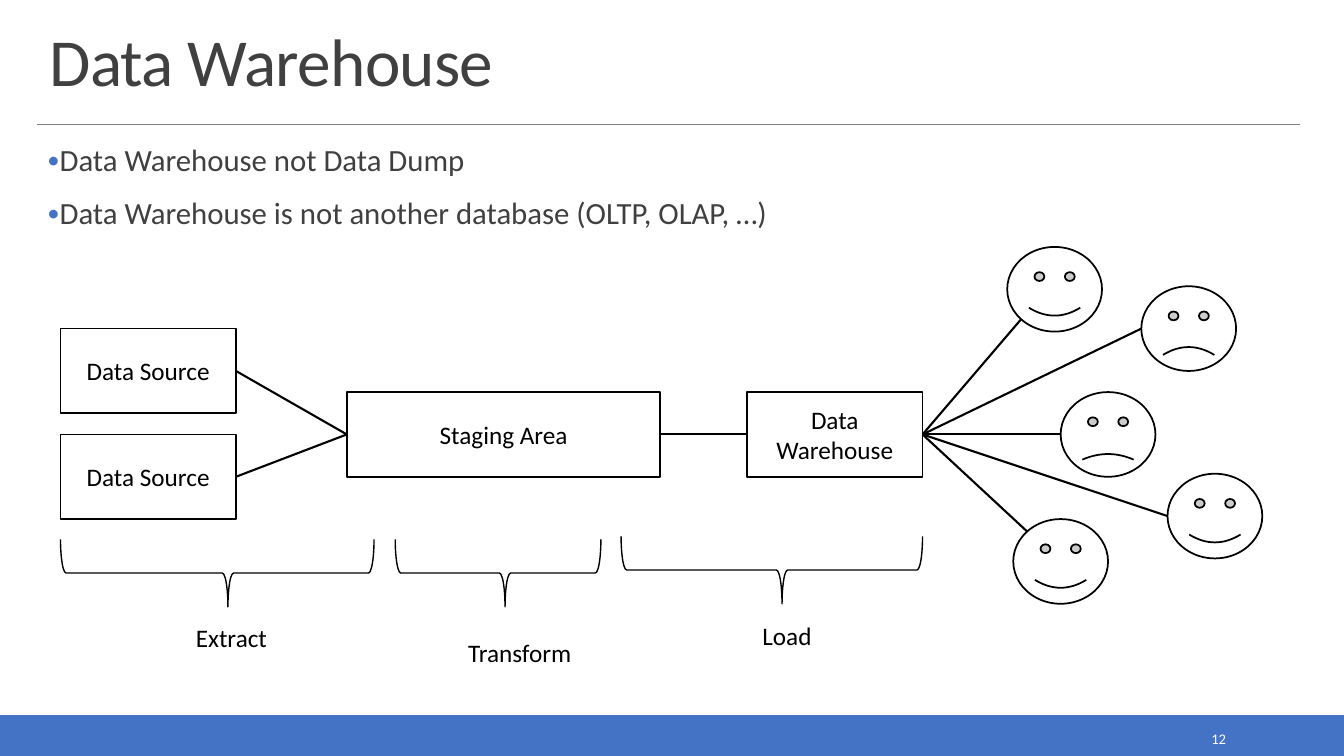
from dataclasses import dataclass
from math import cos, radians, sin
from typing import Optional

from lxml.etree import SubElement
from pptx import Presentation
from pptx.dml.color import RGBColor
from pptx.enum.shapes import MSO_CONNECTOR, MSO_SHAPE
from pptx.enum.text import MSO_ANCHOR, MSO_AUTO_SIZE, PP_ALIGN
from pptx.oxml.ns import qn
from pptx.shapes.autoshape import Shape
from pptx.slide import Slide
from pptx.text.text import TextFrame, _Paragraph
from pptx.util import Inches, Pt


@dataclass(frozen=True)
class Theme:
    font: str = "Calibri"
    accent: str = "4472C4"
    heading: str = "404040"
    ink: str = "000000"
    paper: str = "FFFFFF"
    rule: str = "808080"
    title_size: float = 48
    body_size: float = 22
    label_size: float = 18
    number_size: float = 10.5


@dataclass(frozen=True)
class Box:
    text: str
    left: float
    top: float
    width: float = 1.74
    height: float = 0.84

    @property
    def middle(self) -> float:
        return self.top + self.height / 2

    @property
    def right(self) -> float:
        return self.left + self.width


@dataclass(frozen=True)
class Face:
    left: float
    top: float
    link_angle: int = 180
    smile: Optional[float] = None
    width: float = 0.94
    height: float = 0.84

    @property
    def link_point(self) -> tuple[float, float]:
        angle = radians(self.link_angle)
        return (self.left + self.width / 2 * (1 + cos(angle)),
                self.top + self.height / 2 * (1 - sin(angle)))


@dataclass(frozen=True)
class Phase:
    text: str
    left: float
    top: float
    span: float
    label_left: float
    label_top: float


THEME = Theme()
BRACE_DEPTH = 0.67
SOURCES = [Box("Data Source", 0.6, 3.26), Box("Data Source", 0.6, 4.31)]
STAGING = Box("Staging Area", 3.44, 3.89, width=3.11)
WAREHOUSE = Box("Data Warehouse", 7.41, 3.89)
FACES = [
    Face(10.52, 3.89, smile=-0.033),
    Face(9.99, 2.45, link_angle=225),
    Face(10.05, 5.15, link_angle=135),
    Face(11.58, 4.7),
    Face(11.32, 2.84, smile=-0.047),
]
PHASES = [
    Phase("Extract", 0.6, 5.35, 3.11, 1.47, 6.12),
    Phase("Transform", 3.92, 5.35, 2.04, 4.33, 6.27),
    Phase("Load", 6.16, 5.32, 2.99, 6.98, 6.1),
]
BULLETS = [
    "Data Warehouse not Data Dump",
    "Data Warehouse is not another database (OLTP, OLAP, …)",
]


def write_text(frame: TextFrame, *lines: str, size: float = THEME.label_size,
               color: str = THEME.ink, align: PP_ALIGN = PP_ALIGN.CENTER,
               anchor: MSO_ANCHOR = MSO_ANCHOR.MIDDLE,
               line_spacing: Optional[float] = None) -> list[_Paragraph]:
    frame.text = "\n".join(lines)
    frame.word_wrap = True
    frame.auto_size = MSO_AUTO_SIZE.NONE
    frame.vertical_anchor = anchor
    for paragraph in frame.paragraphs:
        paragraph.alignment = align
        paragraph.line_spacing = line_spacing
        for run in paragraph.runs:
            run.font.name = THEME.font
            run.font.size = Pt(size)
            run.font.color.rgb = RGBColor.from_string(color)
    return list(frame.paragraphs)


def place(shape: Shape, left: float, top: float, width: float, height: float) -> None:
    shape.left, shape.top = Inches(left), Inches(top)
    shape.width, shape.height = Inches(width), Inches(height)


def add_outline(slide: Slide, kind: MSO_SHAPE, left: float, top: float,
                width: float, height: float, fill: Optional[str] = None,
                line: str = THEME.ink, weight: float = 1.25) -> Shape:
    shape = slide.shapes.add_shape(kind, Inches(left), Inches(top),
                                   Inches(width), Inches(height))
    shape.shadow.inherit = False
    if fill:
        shape.fill.solid()
        shape.fill.fore_color.rgb = RGBColor.from_string(fill)
    else:
        shape.fill.background()
    shape.line.color.rgb = RGBColor.from_string(line)
    shape.line.width = Pt(weight)
    return shape


def add_line(slide: Slide, start: tuple[float, float], end: tuple[float, float],
             color: str = THEME.ink, weight: float = 1.5) -> None:
    points = [Inches(value) for value in (*start, *end)]
    connector = slide.shapes.add_connector(MSO_CONNECTOR.STRAIGHT, *points)
    connector.line.color.rgb = RGBColor.from_string(color)
    connector.line.width = Pt(weight)
    SubElement(connector._element.spPr, qn("a:effectLst"))


def add_label(slide: Slide, text: str, left: float, top: float, width: float,
              height: float, **text_format) -> None:
    label = slide.shapes.add_textbox(Inches(left), Inches(top),
                                     Inches(width), Inches(height))
    write_text(label.text_frame, text, **text_format)


def add_box(slide: Slide, box: Box) -> None:
    shape = add_outline(slide, MSO_SHAPE.RECTANGLE, box.left, box.top,
                        box.width, box.height)
    write_text(shape.text_frame, box.text)


def add_face(slide: Slide, face: Face) -> None:
    shape = add_outline(slide, MSO_SHAPE.SMILEY_FACE, face.left, face.top,
                        face.width, face.height, fill=THEME.paper)
    if face.smile is not None:
        shape.adjustments[0] = face.smile


def add_phase(slide: Slide, phase: Phase) -> None:
    inset = (phase.span - BRACE_DEPTH) / 2
    brace = add_outline(slide, MSO_SHAPE.LEFT_BRACE, phase.left + inset,
                        phase.top - inset, BRACE_DEPTH, phase.span, weight=1)
    brace.rotation = 270
    brace.adjustments[0] = 0.083
    brace.adjustments[1] = 0.534
    add_label(slide, phase.text, phase.label_left, phase.label_top, 1.65, 0.4,
              anchor=MSO_ANCHOR.TOP)


def add_bullet(paragraph: _Paragraph) -> None:
    paragraph.space_before = Pt(12)
    paragraph.space_after = Pt(2)
    properties = paragraph._p.get_or_add_pPr()
    properties.set("marL", str(Inches(0.1)))
    properties.set("indent", str(-Inches(0.1)))
    color = SubElement(properties, qn("a:buClr"))
    SubElement(color, qn("a:srgbClr"), val=THEME.accent)
    SubElement(properties, qn("a:buSzPct"), val="80000")
    SubElement(properties, qn("a:buFont"), typeface=THEME.font)
    SubElement(properties, qn("a:buChar"), char="•")


def add_heading(slide: Slide) -> None:
    title, body = slide.shapes.title, slide.placeholders[1]
    place(title, 0.39, 0.2, 12.52, 0.84)
    heading, = write_text(title.text_frame, "Data Warehouse", size=THEME.title_size,
                          color=THEME.heading, align=PP_ALIGN.LEFT,
                          anchor=MSO_ANCHOR.BOTTOM, line_spacing=0.85)
    heading.runs[0].font._element.set("spc", "-50")
    place(body, 0.37, 1.39, 12.52, 1.24)
    for paragraph in write_text(body.text_frame, *BULLETS, size=THEME.body_size,
                                color=THEME.heading, align=PP_ALIGN.LEFT,
                                anchor=MSO_ANCHOR.TOP, line_spacing=0.9):
        add_bullet(paragraph)


def main() -> None:
    presentation = Presentation()
    presentation.slide_width, presentation.slide_height = Inches(13.33), Inches(7.5)
    slide = presentation.slides.add_slide(presentation.slide_layouts[1])
    add_outline(slide, MSO_SHAPE.RECTANGLE, 0, 7.1, 13.33, 0.4,
                fill=THEME.accent, line=THEME.accent)
    add_line(slide, (0.37, 1.23), (12.89, 1.23), color=THEME.rule, weight=0.5)
    add_heading(slide)
    add_label(slide, "12", 10.83, 7.19, 1.43, 0.28, size=THEME.number_size,
              color=THEME.paper, align=PP_ALIGN.RIGHT)
    for box in (*SOURCES, STAGING, WAREHOUSE):
        add_box(slide, box)
    for source in SOURCES:
        add_line(slide, (source.right, source.middle), (STAGING.left, STAGING.middle))
    add_line(slide, (STAGING.right, STAGING.middle), (WAREHOUSE.left, WAREHOUSE.middle))
    for phase in PHASES:
        add_phase(slide, phase)
    for face in FACES:
        add_face(slide, face)
        add_line(slide, (WAREHOUSE.right, WAREHOUSE.middle), face.link_point)
    presentation.save("out.pptx")


if __name__ == "__main__":
    main()
